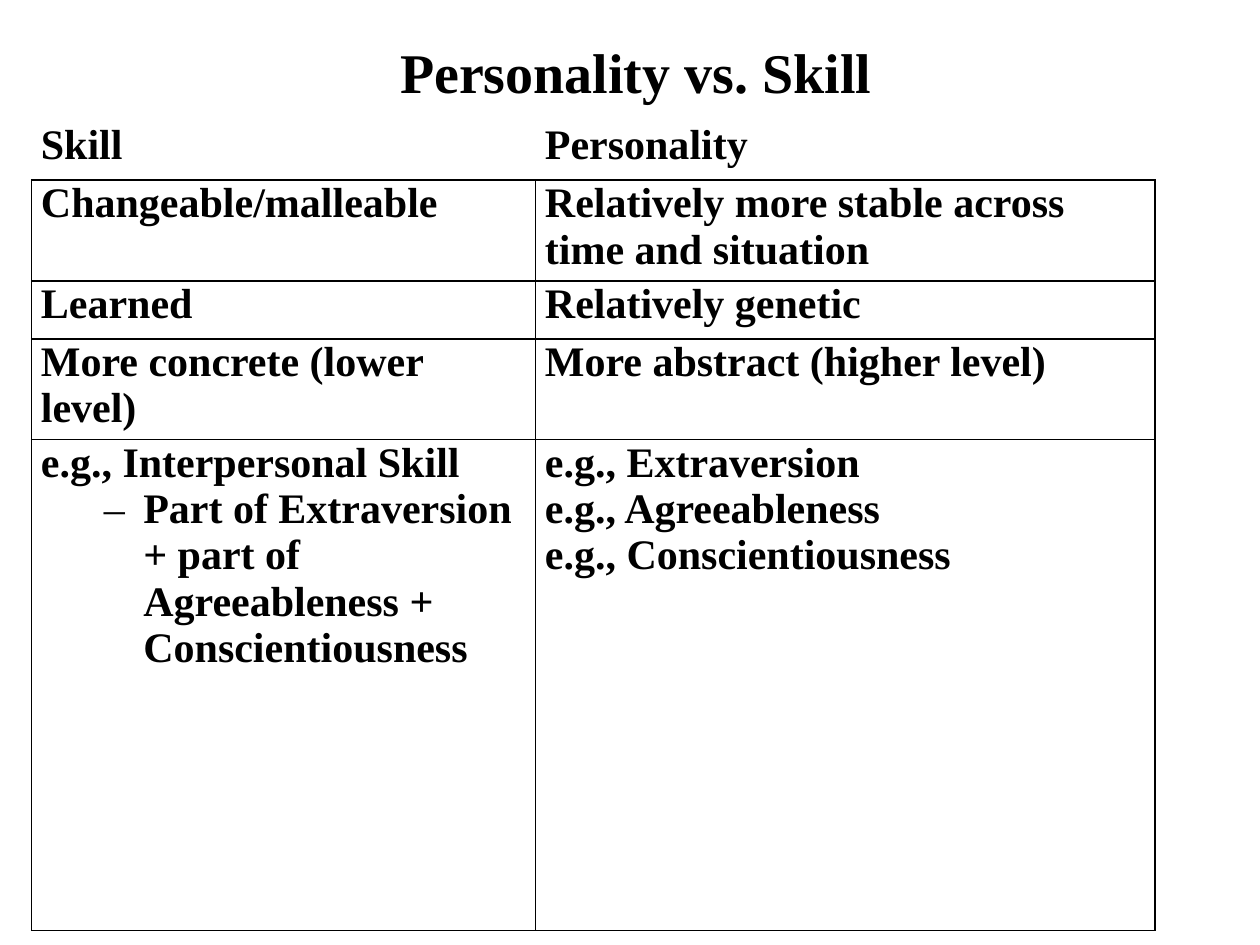
from dataclasses import dataclass

from lxml import etree
from pptx import Presentation
from pptx.dml.color import RGBColor
from pptx.enum.text import MSO_ANCHOR, PP_ALIGN
from pptx.oxml.ns import qn
from pptx.util import Pt

CENTER = PP_ALIGN.CENTER
MIDDLE = MSO_ANCHOR.MIDDLE
TOP = MSO_ANCHOR.TOP


@dataclass(frozen=True)
class Theme:
    font: str = "Times New Roman"
    ink: str = "000000"
    paper: str = "FFFFFF"
    title_size: int = 32
    body_size: int = 24
    border: int = 1


THEME = Theme()
DASH = "–"
COLUMN_WIDTHS = (288, 354)
ROW_HEIGHTS = (33, 57.5, 33, 57.5, 280.5)
COMPARISON = (
    (["Skill"], ["Personality"]),
    (["Changeable/malleable"], ["Relatively more stable across time and situation"]),
    (["Learned"], ["Relatively genetic"]),
    (["More concrete (lower level)"], ["More abstract (higher level)"]),
    (
        [
            "e.g., Interpersonal Skill",
            (DASH, "Part of Extraversion + part of Agreeableness + Conscientiousness"),
        ],
        ["e.g., Extraversion", "e.g., Agreeableness", "e.g., Conscientiousness"],
    ),
)


def add_text(paragraph, wording, size):
    run = paragraph.add_run()
    run.text = wording
    run.font.name = THEME.font
    run.font.size = Pt(size)
    run.font.bold = True
    run.font.color.rgb = RGBColor.from_string(THEME.ink)


def add_dash(paragraph, dash):
    paragraph.level = 1
    properties = paragraph._p.get_or_add_pPr()
    properties.set("marL", str(Pt(58.5)))
    properties.set("indent", str(Pt(-22.5)))
    etree.SubElement(properties, qn("a:buFont"), typeface=THEME.font)
    etree.SubElement(properties, qn("a:buChar"), char=dash)


def add_title(slide, wording):
    title = slide.shapes.add_textbox(Pt(42), Pt(18), Pt(643), Pt(45))
    frame = title.text_frame
    frame.word_wrap = True
    frame.vertical_anchor = MIDDLE
    heading = frame.paragraphs[0]
    heading.alignment = CENTER
    add_text(heading, wording, THEME.title_size)


def draw_borders(cell, is_header):
    properties = cell._tc.get_or_add_tcPr()
    for side in ("lnL", "lnR", "lnT", "lnB"):
        hidden = is_header and side != "lnB"
        line = etree.SubElement(properties, qn(f"a:{side}"), w=str(Pt(THEME.border)))
        fill = etree.SubElement(line, qn("a:solidFill"))
        etree.SubElement(fill, qn("a:srgbClr"), val=THEME.paper if hidden else THEME.ink)


def fill_cell(cell, entries, is_header):
    cell.margin_left = cell.margin_right = Pt(5.4)
    cell.margin_top = cell.margin_bottom = 0
    cell.vertical_anchor = TOP
    draw_borders(cell, is_header)
    cell.fill.background()
    frame = cell.text_frame
    for index, entry in enumerate(entries):
        paragraph = frame.add_paragraph() if index else frame.paragraphs[0]
        if isinstance(entry, tuple):
            dash, entry = entry
            add_dash(paragraph, dash)
        add_text(paragraph, entry, THEME.body_size)


def add_comparison(slide, rows):
    table = slide.shapes.add_table(
        len(rows), len(COLUMN_WIDTHS), Pt(18), Pt(70),
        Pt(sum(COLUMN_WIDTHS)), Pt(sum(ROW_HEIGHTS)),
    ).table
    table.horz_banding = False
    for column, width in zip(table.columns, COLUMN_WIDTHS):
        column.width = Pt(width)
    for row_index, (height, row) in enumerate(zip(ROW_HEIGHTS, rows)):
        table.rows[row_index].height = Pt(height)
        for column_index, entries in enumerate(row):
            fill_cell(table.cell(row_index, column_index), entries, row_index == 0)


def main():
    presentation = Presentation()
    presentation.slide_width = Pt(720)
    presentation.slide_height = Pt(540)
    slide = presentation.slides.add_slide(presentation.slide_layouts[6])
    add_title(slide, "Personality vs. Skill")
    add_comparison(slide, COMPARISON)
    presentation.save("out.pptx")


if __name__ == "__main__":
    main()
